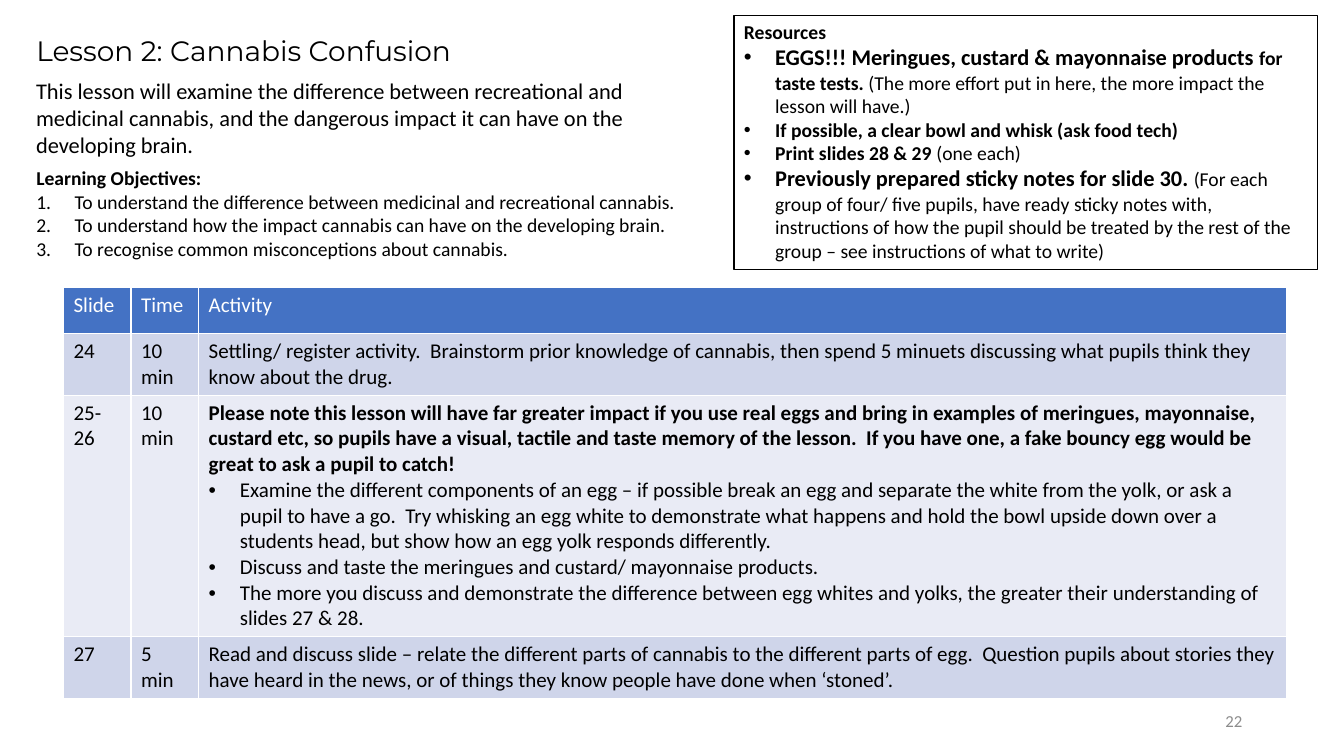
from lxml import etree
from pptx import Presentation
from pptx.dml.color import RGBColor
from pptx.enum import shapes, text
from pptx.oxml import ns
from pptx.util import Inches, Pt

BLACK = RGBColor(0, 0, 0)
WHITE = RGBColor(255, 255, 255)
GREY = RGBColor(0x8C, 0x8C, 0x8C)
HEADER = RGBColor(0x44, 0x72, 0xC4)
BANDS = [RGBColor(0xCF, 0xD5, 0xEA), RGBColor(0xE9, 0xEB, 0xF5)]

TITLE = "Lesson 2: Cannabis Confusion"
SUMMARY = ("This lesson will examine the difference between recreational and medicinal cannabis, "
           "and the dangerous impact it can have on the developing brain.")
PAGE_NUMBER = "22"

OBJECTIVES = [
    (None, [("Learning Objectives:", 14, True)]),
    ("1", [("To understand the difference between medicinal and recreational cannabis.", 14, False)]),
    ("1", [("To understand how the impact cannabis can have on the developing brain.", 14, False)]),
    ("1", [("To recognise common misconceptions about cannabis.", 14, False)]),
]
RESOURCES = [
    (None, [("Resources", 14, True)]),
    ("•", [("EGGS!!! Meringues, custard & mayonnaise products ", 16, True),
           ("for taste tests. ", 14, True),
           ("(The more effort put in here, the more impact the lesson will have.)", 14, False)]),
    ("•", [("If possible, a clear bowl and whisk (ask food tech)", 14, True)]),
    ("•", [("Print slides 28 & 29 ", 14, True), ("(one each)", 14, False)]),
    ("•", [("Previously prepared sticky notes for slide 30. ", 16, True),
           ("(For each group of four/ five pupils, have ready sticky notes with, instructions of how "
            "the pupil should be treated by the rest of the group – see instructions of what to write)",
            14, False)]),
]
EGG_ACTIVITY = [
    (None, [("Please note this lesson will have far greater impact if you use real eggs and bring in "
             "examples of meringues, mayonnaise, custard etc, so pupils have a visual, tactile and taste "
             "memory of the lesson.  If you have one, a fake bouncy egg would be great to ask a pupil "
             "to catch!", 15, True)]),
    ("•", [("Examine the different components of an egg – if possible break an egg and separate the "
            "white from the yolk, or ask a pupil to have a go.  Try whisking an egg white to demonstrate "
            "what happens and hold the bowl upside down over a students head, but show how an egg yolk "
            "responds differently.", 15, False)]),
    ("•", [("Discuss and taste the meringues and custard/ mayonnaise products.", 15, False)]),
    ("•", [("The more you discuss and demonstrate the difference between egg whites and yolks, the "
            "greater their understanding of slides 27 & 28.", 15, False)]),
]
ACTIVITIES = [
    ("Slide", "Time", "Activity"),
    ("24", "10 min", "Settling/ register activity.  Brainstorm prior knowledge of cannabis, then spend "
     "5 minuets discussing what pupils think they know about the drug."),
    ("25-26", "10 min", EGG_ACTIVITY),
    ("27", "5 min", "Read and discuss slide – relate the different parts of cannabis to the different "
     "parts of egg.  Question pupils about stories they have heard in the news, or of things they know "
     "people have done when ‘stoned’."),
]
COLUMN_WIDTHS = [0.67, 0.67, 10.79]
ROW_HEIGHTS = [0.46, 0.6, 2.35, 0.6]


def plain(words, size):
    return [(None, [(words, size, False)])]


def set_marker(para, marker, indent):
    props = para._p.get_or_add_pPr()
    props.set("marL", str(Inches(indent)))
    props.set("indent", str(-Inches(indent)))
    if not marker:
        etree.SubElement(props, ns.qn("a:buNone"))
    elif marker == "1":
        etree.SubElement(props, ns.qn("a:buFont"), typeface="+mj-lt")
        etree.SubElement(props, ns.qn("a:buAutoNum"), type="arabicPeriod")
    else:
        etree.SubElement(props, ns.qn("a:buFont"), typeface="Arial")
        etree.SubElement(props, ns.qn("a:buChar"), char=marker)


def write(frame, paragraphs, color=BLACK, font="Calibri", indent=0.31, align=text.PP_ALIGN.LEFT):
    frame.text = "\n".join("".join(run[0] for run in runs) for _, runs in paragraphs)
    for para, (marker, runs) in zip(frame.paragraphs, paragraphs):
        para.clear()
        para.alignment = align
        para.space_before = para.space_after = Pt(0)
        set_marker(para, marker, indent if marker else 0)
        for words, size, bold in runs:
            span = para.add_run()
            span.text = words
            span.font.name = font
            span.font.size = Pt(size)
            span.font.bold = bold
            span.font.color.rgb = color


def place(box, left, top, width, height, anchor=text.MSO_ANCHOR.TOP):
    box.left, box.top, box.width, box.height = map(Inches, (left, top, width, height))
    frame = box.text_frame
    frame.word_wrap = True
    frame.auto_size = text.MSO_AUTO_SIZE.NONE
    frame.vertical_anchor = anchor
    return frame


def add_activities(page):
    table = page.shapes.add_table(len(ACTIVITIES), len(COLUMN_WIDTHS), Inches(0.63), Inches(2.85),
                                  Inches(sum(COLUMN_WIDTHS)), Inches(sum(ROW_HEIGHTS))).table
    for column, width in zip(table.columns, COLUMN_WIDTHS):
        column.width = Inches(width)
    for index, (row, height, entries) in enumerate(zip(table.rows, ROW_HEIGHTS, ACTIVITIES)):
        row.height = Inches(height)
        for cell, entry in zip(row.cells, entries):
            cell.fill.solid()
            cell.fill.fore_color.rgb = BANDS[(index - 1) % 2] if index else HEADER
            paragraphs = plain(entry, 15) if isinstance(entry, str) else entry
            write(cell.text_frame, paragraphs, BLACK if index else WHITE)


def main():
    """Build the lesson plan slide."""
    deck = Presentation()
    deck.slide_width, deck.slide_height = Inches(13.33), Inches(7.5)
    page = deck.slides.add_slide(deck.slide_layouts[1])

    write(place(page.shapes.title, 0.26, 0.28, 6.71, 0.44), plain(TITLE, 20), font="Montserrat")
    write(place(page.placeholders[1], 0.26, 1.6, 6.88, 1.04), OBJECTIVES, indent=0.38)

    summary = page.shapes.add_textbox(0, 0, 0, 0)
    write(place(summary, 0.26, 0.72, 6.88, 0.91), plain(SUMMARY, 16))

    resources = page.shapes.add_shape(shapes.MSO_SHAPE.RECTANGLE, 0, 0, 0, 0)
    resources.shadow.inherit = False
    resources.fill.background()
    resources.line.color.rgb = BLACK
    resources.line.width = Pt(0.75)
    write(place(resources, 7.28, 0.15, 5.79, 2.52), RESOURCES)

    add_activities(page)

    number = page.shapes.add_textbox(0, 0, 0, 0)
    write(place(number, 9.42, 6.95, 3, 0.4, text.MSO_ANCHOR.MIDDLE), plain(PAGE_NUMBER, 12), GREY,
          align=text.PP_ALIGN.RIGHT)

    deck.save("out.pptx")


if __name__ == "__main__":
    main()
